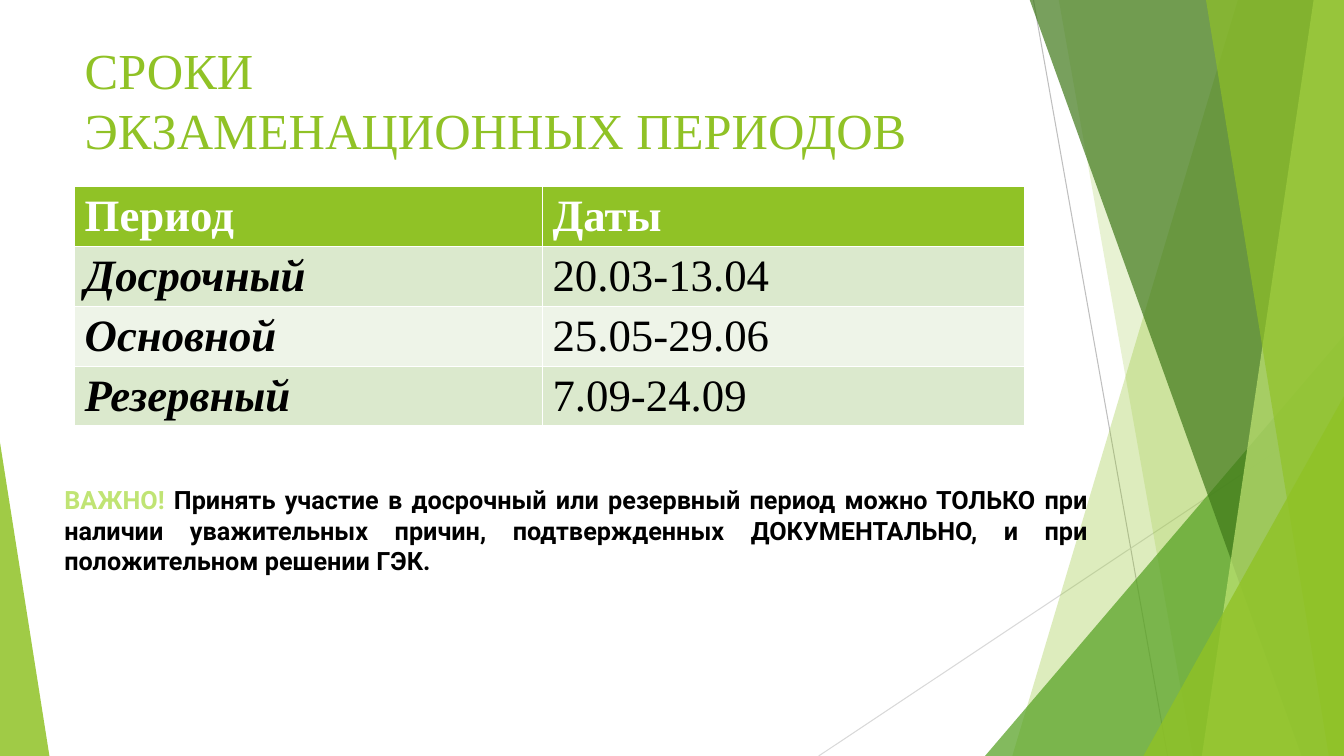
from dataclasses import dataclass

from lxml.etree import SubElement
from pptx import Presentation
from pptx.dml.color import RGBColor
from pptx.dml.fill import FillFormat
from pptx.enum.shapes import MSO_CONNECTOR, MSO_SHAPE
from pptx.enum.text import MSO_ANCHOR, MSO_AUTO_SIZE, PP_ALIGN
from pptx.oxml.ns import qn
from pptx.shapes.autoshape import Shape
from pptx.slide import Slide
from pptx.util import Inches, Pt

WIDTH, HEIGHT = 13.33, 7.5
TOP = -0.01
GREEN, LIME, BLACK, WHITE = "90C226", "C0E474", "000000", "FFFFFF"
SERIF, SANS = "Times New Roman", "Roboto"


@dataclass
class Ray:
    start: tuple[float, float]
    end: tuple[float, float]
    color: str


@dataclass
class Band:
    """Area from a slanted edge to the right side of the slide."""
    top_x: float
    bottom_x: float
    color: str
    opacity: int


@dataclass
class Corner:
    """Triangle standing on the bottom edge; apex is 0 (left) to 1 (right)."""
    left: float
    top: float
    width: float
    apex: float
    color: str
    opacity: int


DECOR = [
    Ray((10.25, 0), (11.58, HEIGHT), "BFBFBF"),
    Ray((WIDTH, 4.03), (8.12, HEIGHT), "D9D9D9"),
    Band(12.28, 10.04, GREEN, 30),
    Band(10.5, 11.83, GREEN, 20),
    Corner(9.77, 3.33, 3.56, 1, "54A021", 72),
    Band(10.21, 12.91, "3F7819", 70),
    Band(13.03, 11.92, LIME, 70),
    Band(11.96, 13.18, GREEN, 65),
    Corner(11.34, 3.93, 1.99, 1, GREEN, 80),
    Corner(0, 4.39, 0.49, 0, GREEN, 85),
]

PERIODS = [
    ("Период", "Даты"),
    ("Досрочный", "20.03-13.04"),
    ("Основной", "25.05-29.06"),
    ("Резервный", "7.09-24.09"),
]
COLUMN_WIDTHS = (4.64, 4.78)
ROW_HEIGHT = 0.59

NOTICE = [
    ("ВАЖНО! ", LIME),
    ("Принять участие в досрочный или резервный период можно ТОЛЬКО при наличии "
     "уважительных причин, подтвержденных ДОКУМЕНТАЛЬНО, и при положительном "
     "решении ГЭК.", BLACK),
]


def rgb(color: str) -> RGBColor:
    return RGBColor.from_string(color)


def set_fill(fill: FillFormat, color: str) -> None:
    fill.solid()
    fill.fore_color.rgb = rgb(color)


def style_glass(sp: Shape, color: str, opacity: int) -> None:
    """Give a shape a translucent fill with no line or shadow."""
    sp.shadow.inherit = False
    sp.line.fill.background()
    set_fill(sp.fill, color)
    clr = sp._element.spPr.find(qn("a:solidFill"))[0]
    SubElement(clr, qn("a:alpha"), val=str(opacity * 1000))


def add_ray(s: Slide, ray: Ray) -> None:
    points = [Inches(v) for v in (*ray.start, *ray.end)]
    line = s.shapes.add_connector(MSO_CONNECTOR.STRAIGHT, *points)
    line.line.color.rgb = rgb(ray.color)
    line.line.width = Pt(0.75)
    SubElement(line._element.spPr, qn("a:effectLst"))


def add_band(s: Slide, band: Band) -> None:
    corners = [(band.top_x, TOP), (WIDTH, TOP), (WIDTH, HEIGHT), (band.bottom_x, HEIGHT)]
    points = [(Inches(x), Inches(y)) for x, y in corners]
    builder = s.shapes.build_freeform(*points[0])
    builder.add_line_segments(points[1:], close=True)
    style_glass(builder.convert_to_shape(), band.color, band.opacity)


def add_corner(s: Slide, corner: Corner) -> None:
    sp = s.shapes.add_shape(
        MSO_SHAPE.ISOSCELES_TRIANGLE, Inches(corner.left), Inches(corner.top),
        Inches(corner.width), Inches(HEIGHT - corner.top))
    sp.adjustments[0] = corner.apex
    style_glass(sp, corner.color, corner.opacity)


def set_title(s: Slide) -> None:
    title = s.shapes.title
    title.left, title.top = Inches(0.74), Inches(0.33)
    title.width, title.height = Inches(11.83), Inches(1.31)
    tf = title.text_frame
    tf.text = "СРОКИ\vЭКЗАМЕНАЦИОННЫХ ПЕРИОДОВ"
    tf.auto_size = MSO_AUTO_SIZE.NONE
    tf.vertical_anchor = MSO_ANCHOR.MIDDLE
    p = tf.paragraphs[0]
    p.alignment = PP_ALIGN.LEFT
    p.font.name, p.font.size = SERIF, Pt(36)
    p.font.color.rgb = rgb(GREEN)


def add_periods(s: Slide) -> None:
    table = s.shapes.add_table(
        len(PERIODS), len(COLUMN_WIDTHS), Inches(0.74), Inches(1.85),
        Inches(sum(COLUMN_WIDTHS)), Inches(ROW_HEIGHT * len(PERIODS))).table
    for column, width in zip(table.columns, COLUMN_WIDTHS):
        column.width = Inches(width)
    for i, texts in enumerate(PERIODS):
        header = i == 0
        fill = GREEN if header else ("EEF4E8", "DBE9CD")[i % 2]
        for j, text in enumerate(texts):
            cell = table.cell(i, j)
            cell.text = text
            set_fill(cell.fill, fill)
            font = cell.text_frame.paragraphs[0].font
            font.name, font.size = SERIF, Pt(32)
            font.bold = header or j == 0
            font.italic = not header and j == 0
            font.color.rgb = rgb(WHITE if header else BLACK)


def add_notice(s: Slide) -> None:
    box = s.shapes.add_textbox(Inches(0.54), Inches(4.76), Inches(10.35), Inches(1.01))
    tf = box.text_frame
    tf.word_wrap = True
    tf.auto_size = MSO_AUTO_SIZE.SHAPE_TO_FIT_TEXT
    p = tf.paragraphs[0]
    p.alignment = PP_ALIGN.JUSTIFY
    p.font.name, p.font.size, p.font.bold = SANS, Pt(18), True
    for text, color in NOTICE:
        r = p.add_run()
        r.text = text
        r.font.color.rgb = rgb(color)


def main() -> None:
    prs = Presentation()
    prs.slide_width, prs.slide_height = Inches(WIDTH), Inches(HEIGHT)
    s = prs.slides.add_slide(prs.slide_layouts[5])
    draw = {Ray: add_ray, Band: add_band, Corner: add_corner}
    for item in DECOR:
        draw[type(item)](s, item)
    set_title(s)
    add_periods(s)
    add_notice(s)
    prs.save("out.pptx")


if __name__ == "__main__":
    main()
